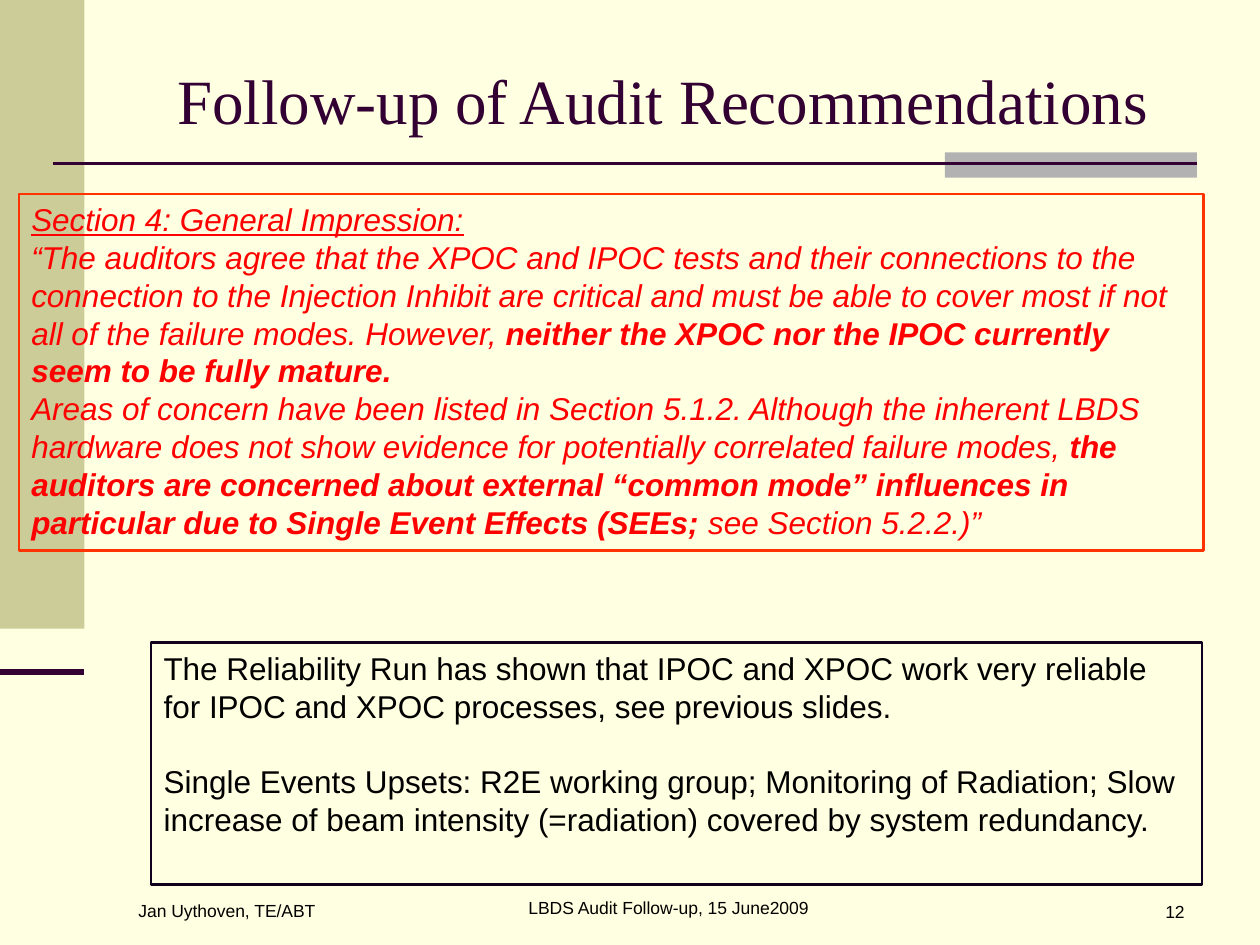
from lxml import etree
from pptx import Presentation
from pptx.dml.color import RGBColor
from pptx.enum import shapes, text
from pptx.oxml.ns import qn
from pptx.util import Inches, Pt

COLOURS = {
    "background": "FFFFE1", "sidebar": "CCCC99", "accent": "B2B2B2",
    "plum": "330033", "quote_border": "FF3300", "quote": "FF0000",
    "reply_border": "10001E", "black": "000000",
}
LEFT, CENTER, RIGHT = text.PP_ALIGN.LEFT, text.PP_ALIGN.CENTER, text.PP_ALIGN.RIGHT

TITLE = "Follow-up of Audit Recommendations"
QUOTE_HEADING = "Section 4: General Impression:"
# Each paragraph is a list of (text, bold) runs.
QUOTE = [
    [(QUOTE_HEADING, False)],
    [("“The auditors agree that the XPOC and IPOC tests and their connections to the "
      "connection to the Injection Inhibit are critical and must be able to cover most "
      "if not all of the failure modes. However, ", False),
     ("neither the XPOC nor the IPOC currently seem to be fully mature.", True)],
    [("Areas of concern have been listed in Section 5.1.2. Although the inherent LBDS "
      "hardware does not show evidence for potentially correlated failure modes, ", False),
     ("the auditors are concerned about external “common mode” influences in particular "
      "due to Single Event Effects (SEEs; ", True),
     ("see Section 5.2.2.)”", False)],
]
REPLY = [
    [("The Reliability Run has shown that IPOC and XPOC work very reliable for IPOC and "
      "XPOC processes, see previous slides.", False)],
    [("Single Events Upsets: R2E working group; Monitoring of Radiation; Slow increase of "
      "beam intensity (=radiation) covered by system redundancy.", False)],
]
BANDS = [
    ("sidebar", (0, 0, 0.67, 4.99)),
    ("accent", (7.5, 1.21, 2, 0.2)),
]
RULES = [  # start x, end x, y, points
    (0.42, 9.5, 1.3, 1.5),
    (0, 0.67, 5.33, 3.5),
]
FOOTER = [
    ("Jan Uythoven, TE/ABT", (1, 7.09, 2.17, 0.24), LEFT),
    ("LBDS Audit Follow-up, 15 June2009", (3.68, 7.07, 3.25, 0.27), CENTER),
    ("12", (7.42, 7.1, 2.08, 0.23), RIGHT),
]


def rgb(name):
    return RGBColor.from_string(COLOURS[name])


def inches(values):
    return [Inches(value) for value in values]


def style(paragraph, size, colour, align=LEFT, face="Arial"):
    paragraph.alignment = align
    font = paragraph.font
    font.name, font.size = face, Pt(size)
    font.color.rgb = rgb(colour)
    return font


def add_rectangle(slide, place):
    rectangle = slide.shapes.add_shape(shapes.MSO_SHAPE.RECTANGLE, *inches(place))
    rectangle.shadow.inherit = False
    return rectangle


def add_rule(slide, start, end, y, weight):
    rule = slide.shapes.add_connector(
        shapes.MSO_CONNECTOR.STRAIGHT, *inches((start, y, end, y)))
    rule.line.color.rgb = rgb("plum")
    rule.line.width = Pt(weight)
    etree.SubElement(rule._element.spPr, qn("a:effectLst"))


def add_framed_text(slide, place, border, paragraphs, colour):
    box = add_rectangle(slide, place)
    box.fill.background()
    box.line.color.rgb = rgb(border)
    box.line.width = Pt(1.5)
    frame = box.text_frame
    frame.word_wrap = True
    frame.vertical_anchor = text.MSO_ANCHOR.TOP
    for index, runs in enumerate(paragraphs):
        paragraph = frame.add_paragraph() if index else frame.paragraphs[0]
        style(paragraph, 18, colour)
        for words, bold in runs:
            run = paragraph.add_run()
            run.text = words
            run.font.bold = bold
    return frame.paragraphs


def main():
    deck = Presentation()
    deck.slide_width, deck.slide_height = inches((10, 7.5))
    slide = deck.slides.add_slide(deck.slide_layouts[5])
    slide.background.fill.solid()
    slide.background.fill.fore_color.rgb = rgb("background")

    for colour, place in BANDS:
        band = add_rectangle(slide, place)
        band.fill.solid()
        band.fill.fore_color.rgb = rgb(colour)
        band.line.fill.background()
    for rule in RULES:
        add_rule(slide, *rule)

    title = slide.shapes.title
    title.left, title.top, title.width, title.height = inches((1.01, 0.16, 8.5, 1.25))
    title.text_frame.text = TITLE
    title.text_frame.vertical_anchor = text.MSO_ANCHOR.MIDDLE
    style(title.text_frame.paragraphs[0], 36, "plum", CENTER, "Times New Roman")

    for words, place, align in FOOTER:
        frame = slide.shapes.add_textbox(*inches(place)).text_frame
        frame.word_wrap = True
        frame.text = words
        style(frame.paragraphs[0], 10, "black", align)

    quote = add_framed_text(slide, (0.15, 1.54, 9.4, 2.83), "quote_border", QUOTE, "quote")
    for paragraph in quote:
        paragraph.font.italic = True
    quote[0].font.underline = True

    reply = add_framed_text(slide, (1.2, 5.1, 8.34, 1.92), "reply_border", REPLY, "black")
    reply[1].space_before = Pt(21.5)

    deck.save("out.pptx")


if __name__ == "__main__":
    main()
